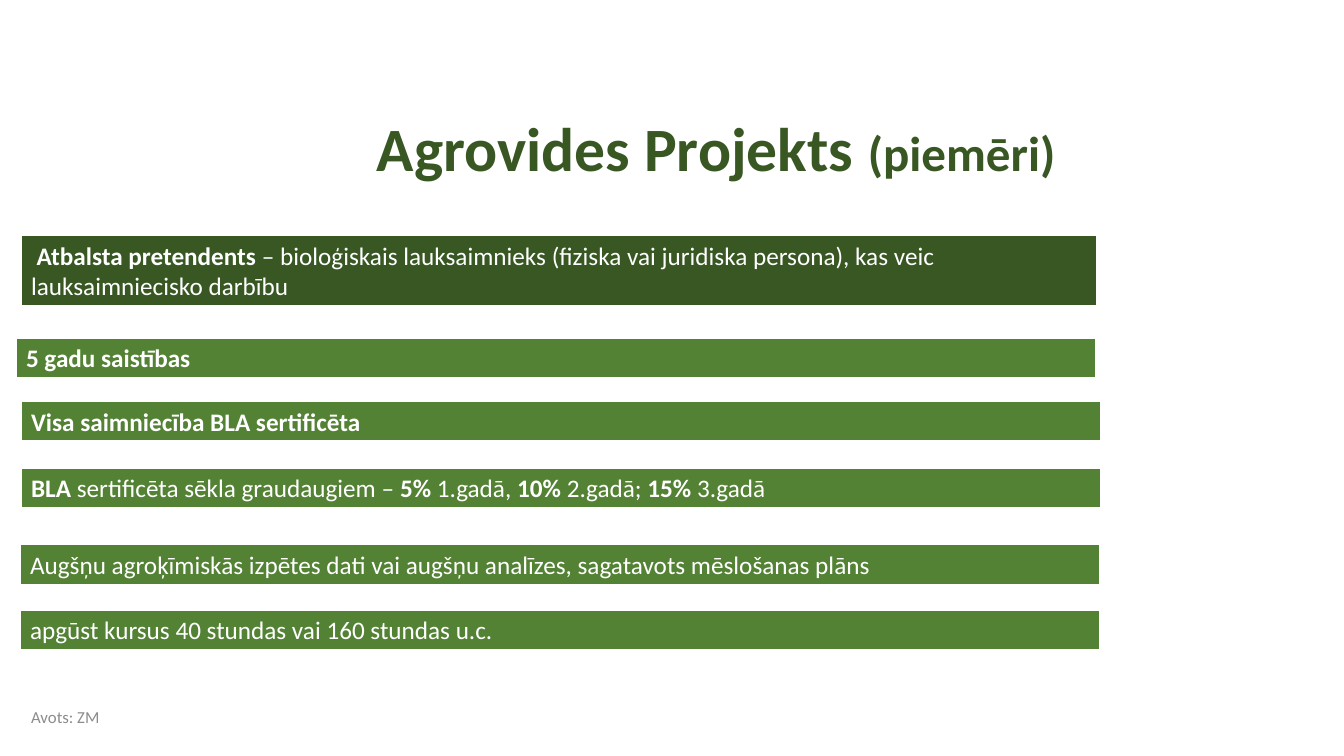
from pptx import Presentation
from pptx.dml.color import RGBColor
from pptx.enum.shapes import MSO_SHAPE
from pptx.enum.text import MSO_ANCHOR, MSO_AUTO_SIZE, PP_ALIGN
from pptx.util import Emu, Pt

EMU_PER_PX = 9144
DARK_GREEN, GREEN, WHITE, GREY = "385723", "548235", "FFFFFF", "8C8C8C"


def px(length):
    return Emu(length * EMU_PER_PX)


def colour(value):
    return RGBColor.from_string(value)


class SlideBuilder:
    font_name = "Calibri"

    def __init__(self, slide):
        self.slide = slide

    def add_runs(self, paragraph, parts, text_colour):
        for text, size, bold in parts:
            run = paragraph.add_run()
            run.text = text
            run.font.name = self.font_name
            run.font.size = Pt(size)
            run.font.bold = bold
            run.font.color.rgb = colour(text_colour)

    def title(self, left, top, width, height, parts):
        heading = self.slide.shapes.title
        heading.left, heading.top = px(left), px(top)
        heading.width, heading.height = px(width), px(height)
        frame = heading.text_frame
        frame.margin_left = frame.margin_right = 0
        frame.margin_top = frame.margin_bottom = 0
        frame.vertical_anchor = MSO_ANCHOR.BOTTOM
        frame.auto_size = MSO_AUTO_SIZE.NONE
        frame.word_wrap = True
        paragraph = frame.paragraphs[0]
        paragraph.alignment = PP_ALIGN.RIGHT
        paragraph.line_spacing = 0.9
        self.add_runs(paragraph, parts, DARK_GREEN)

    def bar(self, left, top, width, height, fill, parts):
        bar = self.slide.shapes.add_shape(
            MSO_SHAPE.RECTANGLE, px(left), px(top), px(width), px(height))
        bar.shadow.inherit = False
        bar.fill.solid()
        bar.fill.fore_color.rgb = colour(fill)
        bar.line.color.rgb = colour(WHITE)
        bar.line.width = Pt(1.5)
        frame = bar.text_frame
        frame.word_wrap = True
        frame.auto_size = MSO_AUTO_SIZE.SHAPE_TO_FIT_TEXT
        frame.vertical_anchor = MSO_ANCHOR.TOP
        paragraph = frame.paragraphs[0]
        paragraph.alignment = PP_ALIGN.LEFT
        self.add_runs(paragraph, [(text, 18, bold) for text, bold in parts], WHITE)

    def note(self, left, top, width, height, text):
        note = self.slide.shapes.add_textbox(
            px(left), px(top), px(width), px(height))
        frame = note.text_frame
        frame.word_wrap = True
        frame.vertical_anchor = MSO_ANCHOR.MIDDLE
        self.add_runs(frame.paragraphs[0], [(text, 12, False)], GREY)


REQUIREMENTS = [
    (16, 335, [("5 gadu saistības", True)]),
    (21, 398, [("Visa saimniecība BLA sertificēta", True)]),
    (21, 464, [
        ("BLA ", True), ("sertificēta sēkla graudaugiem – ", False),
        ("5%", True), (" 1.gadā, ", False),
        ("10%", True), (" 2.gadā; ", False),
        ("15% ", True), ("3.gadā", False),
    ]),
    (20, 540, [("Augšņu agroķīmiskās izpētes dati vai augšņu analīzes, "
                "sagatavots mēslošanas plāns", False)]),
    (20, 605, [("apgūst kursus 40 stundas vai 160 stundas u.c.", False)]),
]


def main():
    presentation = Presentation()
    presentation.slide_width, presentation.slide_height = px(1333), px(750)
    title_only = presentation.slide_layouts[5]
    builder = SlideBuilder(presentation.slides.add_slide(title_only))
    builder.title(275, 104, 772, 79, [
        ("Agrovides Projekts ", 44, True), ("(piemēri)", 35, True)])
    builder.bar(21, 233, 1067, 71, DARK_GREEN, [
        (" Atbalsta pretendents ", True),
        ("– bioloģiskais lauksaimnieks (fiziska vai juridiska persona), "
         "kas veic lauksaimniecisko darbību", False)])
    for left, top, parts in REQUIREMENTS:
        builder.bar(left, top, 1071, 40, GREEN, parts)
    builder.note(21, 695, 289, 33, "Avots: ZM")
    presentation.save("out.pptx")


if __name__ == "__main__":
    main()
